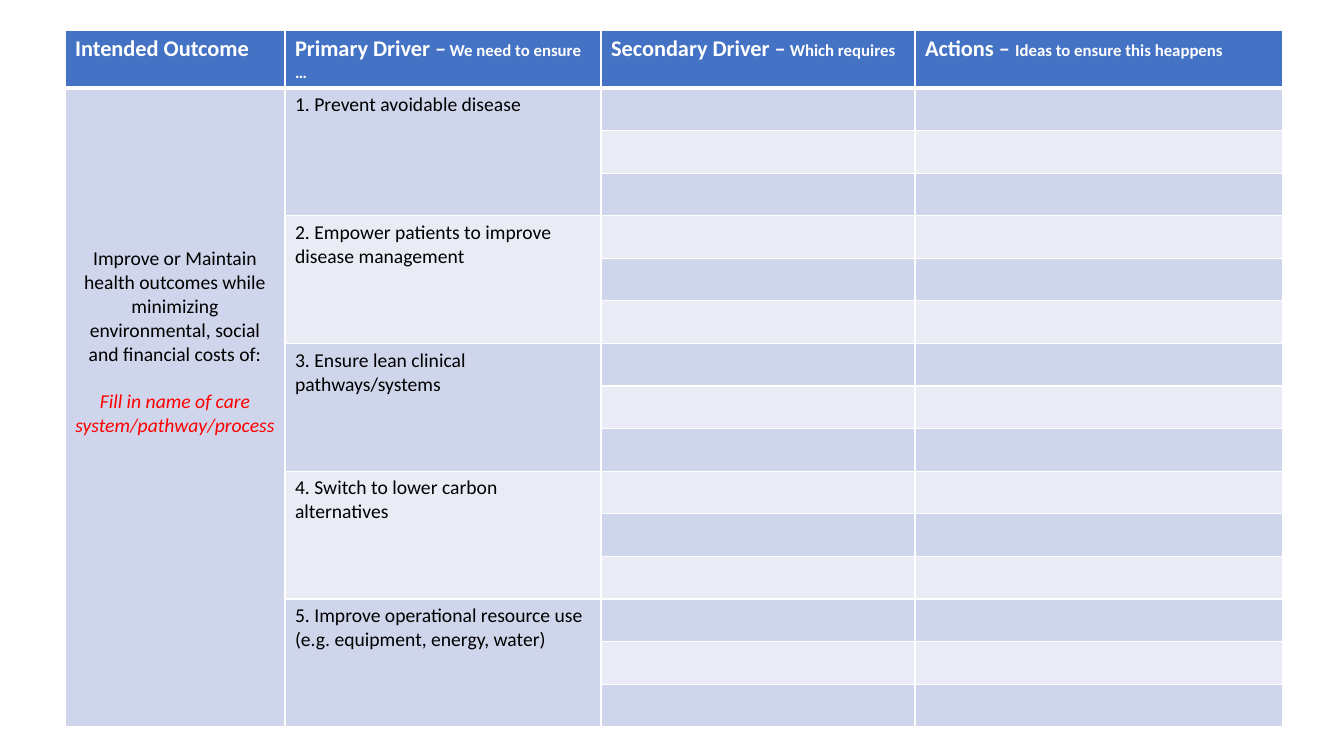
from lxml.etree import SubElement
from pptx import Presentation
from pptx.dml.color import RGBColor
from pptx.enum.text import PP_ALIGN
from pptx.oxml import parse_xml
from pptx.oxml.ns import nsdecls
from pptx.util import Pt

HEADERS = [
    [("Intended Outcome", 16)],
    [("Primary Driver –", 16), (" ", 10), ("We need to ensure …", 12)],
    [("Secondary Driver –", 16), (" Which requires", 12)],
    [("Actions – ", 16), ("Ideas to ensure this heappens", 12)],
]
OUTCOME = "Improve or Maintain health outcomes while minimizing environmental, social and financial costs of:"
CARE_PROMPT = "Fill in name of care system/pathway/process"
PRIMARY_DRIVERS = [
    "1. Prevent avoidable disease",
    "2. Empower patients to improve disease management",
    "3. Ensure lean clinical pathways/systems",
    "4. Switch to lower carbon alternatives",
    "5. Improve operational resource use (e.g. equipment, energy, water)",
]
ROWS_PER_DRIVER = 3

PX = 914400 / 100.8
SLIDE_SIZE = (1344, 756)
TABLE_LEFT, TABLE_TOP = 65, 30
COLUMN_WIDTHS = [220, 316, 314, 368]
HEADER_HEIGHT, BODY_HEIGHT = 56, 639
OUTCOME_TOP_MARGIN = 159

FONT = "Calibri"
WHITE = RGBColor(0xFF, 0xFF, 0xFF)
BLACK = RGBColor(0x00, 0x00, 0x00)
RED = RGBColor(0xFF, 0x00, 0x00)
HEADER_BLUE = RGBColor(0x44, 0x72, 0xC4)
BAND_DARK = RGBColor(0xCF, 0xD5, 0xEA)
BAND_LIGHT = RGBColor(0xE9, 0xEB, 0xF5)


def emu(pixels):
    return round(pixels * PX)


def add_run(paragraph, text, size, color, bold=False, italic=False):
    run = paragraph.add_run()
    run.text = text
    font = run.font
    font.name, font.size = FONT, Pt(size)
    font.bold, font.italic = bold, italic
    font.color.rgb = color


def set_borders(cell, top, bottom):
    properties = cell._tc.get_or_add_tcPr()
    widths = {"lnL": 1, "lnR": 1, "lnT": top, "lnB": bottom}
    for position, (tag, width) in enumerate(widths.items()):
        line = parse_xml(
            f'<a:{tag} {nsdecls("a")} w="{Pt(width)}"><a:solidFill>'
            f'<a:srgbClr val="{WHITE}"/></a:solidFill></a:{tag}>'
        )
        properties.insert(position, line)


def style_cells(table):
    for row_index, row in enumerate(table.rows):
        band = BAND_DARK if row_index % 2 else BAND_LIGHT
        for cell in row.cells:
            cell.fill.solid()
            cell.fill.fore_color.rgb = band if row_index else HEADER_BLUE
            set_borders(cell, 3 if row_index == 1 else 1, 1 if row_index else 3)


def fill_headers(table):
    for column, parts in enumerate(HEADERS):
        paragraph = table.cell(0, column).text_frame.paragraphs[0]
        for text, size in parts:
            add_run(paragraph, text, size, WHITE, bold=True)


def fill_outcome(table, last_row):
    cell = table.cell(1, 0)
    cell.merge(table.cell(last_row, 0))
    cell.margin_top = emu(OUTCOME_TOP_MARGIN)
    outcome = cell.text_frame.paragraphs[0]
    prompt = cell.text_frame.add_paragraph()
    prompt.space_before = Pt(17)
    outcome.alignment = prompt.alignment = PP_ALIGN.CENTER
    add_run(outcome, OUTCOME, 14, BLACK)
    add_run(prompt, CARE_PROMPT, 14, RED, italic=True)


def fill_drivers(table):
    for index, driver in enumerate(PRIMARY_DRIVERS):
        first_row = 1 + index * ROWS_PER_DRIVER
        cell = table.cell(first_row, 1)
        cell.merge(table.cell(first_row + ROWS_PER_DRIVER - 1, 1))
        add_run(cell.text_frame.paragraphs[0], driver, 14, BLACK)


def main():
    presentation = Presentation()
    presentation.slide_width, presentation.slide_height = map(emu, SLIDE_SIZE)
    slide = presentation.slides.add_slide(presentation.slide_layouts[6])
    body_rows = len(PRIMARY_DRIVERS) * ROWS_PER_DRIVER
    table = slide.shapes.add_table(
        body_rows + 1, len(HEADERS), emu(TABLE_LEFT), emu(TABLE_TOP),
        emu(sum(COLUMN_WIDTHS)), emu(HEADER_HEIGHT + BODY_HEIGHT),
    ).table
    for column, width in zip(table.columns, COLUMN_WIDTHS):
        column.width = emu(width)
    for index, row in enumerate(table.rows):
        row.height = emu(BODY_HEIGHT / body_rows if index else HEADER_HEIGHT)
    style_cells(table)
    fill_headers(table)
    fill_outcome(table, body_rows)
    fill_drivers(table)
    presentation.save("out.pptx")


if __name__ == "__main__":
    main()
